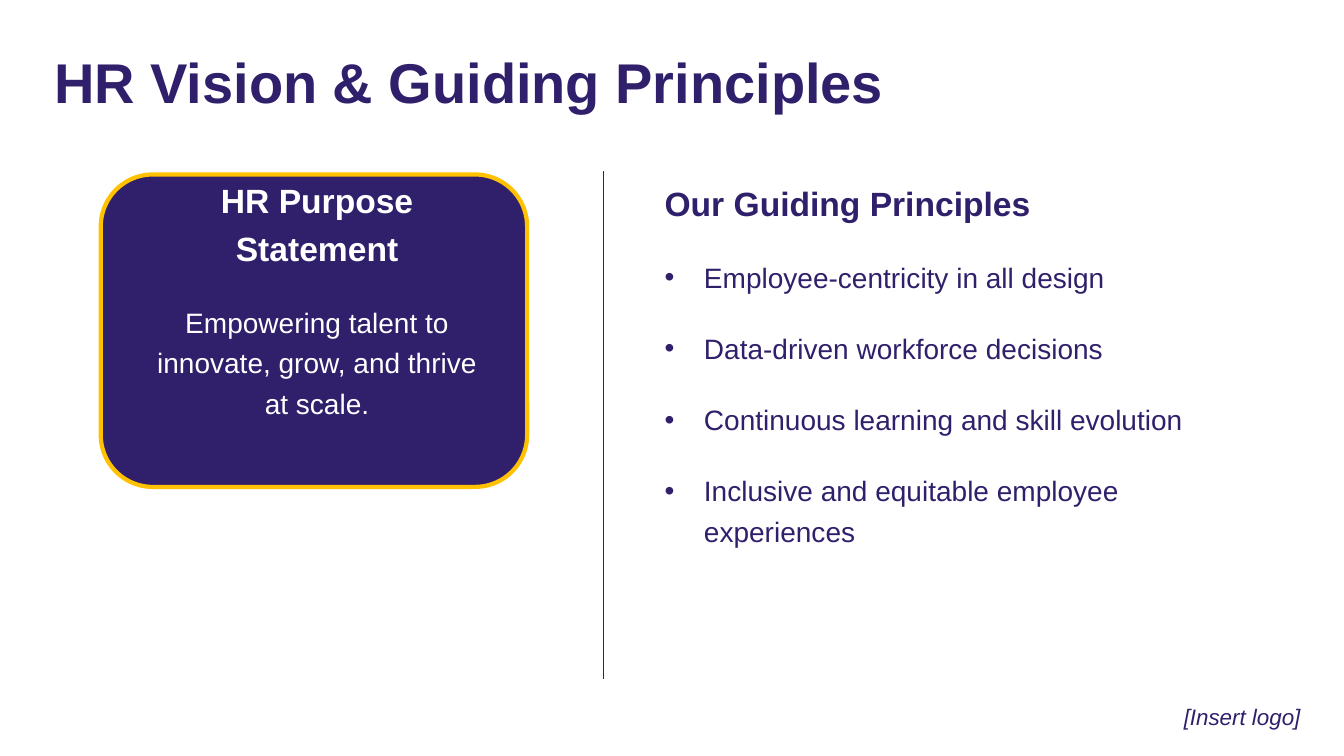
from lxml import etree
from pptx import Presentation, util as u
from pptx.dml.color import RGBColor
from pptx.enum import shapes, text
from pptx.oxml import ns

COLORS = {"navy": "30206B", "rule": "31216B", "gold": "FFC100", "white": "FFFFFF"}
COLUMNS, ROWS = 40, 24
PRINCIPLES = [
    "Employee-centricity in all design",
    "Data-driven workforce decisions",
    "Continuous learning and skill evolution",
    "Inclusive and equitable employee experiences",
]


def color(name):
    return RGBColor.from_string(COLORS[name])


def write(frame, content, size=20, ink="navy", bold=False, italic=False,
          align=text.PP_ALIGN.LEFT, spacing=1.2, before=0, left=0, hanging=0, bullet=None):
    """Fill the first empty paragraph of a frame, or add one after it."""
    first = frame.paragraphs[0]
    paragraph = frame.add_paragraph() if first.runs else first
    paragraph.alignment = align
    paragraph.line_spacing = spacing
    paragraph.space_before = u.Pt(before)
    properties = paragraph._p.get_or_add_pPr()
    properties.set("marL", str(u.Inches(left)))
    properties.set("indent", str(-u.Inches(hanging)))
    if bullet:
        etree.SubElement(properties, ns.qn("a:buFont"), typeface="Arial")
        etree.SubElement(properties, ns.qn("a:buChar"), char=bullet)
    run = paragraph.add_run()
    run.text = content
    run.font.name = "Arial"
    run.font.size = u.Pt(size)
    run.font.bold = bold
    run.font.italic = italic
    run.font.color.rgb = color(ink)


class SlideBuilder:
    """Places elements on a slide by grid columns and rows."""

    def __init__(self, presentation):
        self.slide = presentation.slides.add_slide(presentation.slide_layouts[6])
        self.column = presentation.slide_width / COLUMNS
        self.row = presentation.slide_height / ROWS

    def place(self, x, y, width, height):
        return (round(x * self.column), round(y * self.row),
                round(width * self.column), round(height * self.row))

    def text_box(self, *grid, anchor=text.MSO_ANCHOR.TOP):
        frame = self.slide.shapes.add_textbox(*self.place(*grid)).text_frame
        frame.word_wrap = True
        frame.vertical_anchor = anchor
        frame.margin_left = frame.margin_right = frame.margin_top = frame.margin_bottom = 0
        return frame

    def card(self, *grid):
        shape = self.slide.shapes.add_shape(
            shapes.MSO_SHAPE.ROUNDED_RECTANGLE, *self.place(*grid))
        shape.shadow.inherit = False
        shape.fill.solid()
        shape.fill.fore_color.rgb = color("navy")
        shape.line.color.rgb = color("gold")
        shape.line.width = u.Pt(3)

    def divider(self, x, top, bottom):
        left, start, _, end = self.place(x, top, 0, bottom)
        line = self.slide.shapes.add_connector(
            shapes.MSO_CONNECTOR.STRAIGHT, left, start, left, end)
        line.line.color.rgb = color("rule")
        line.line.width = u.Pt(0.75)
        etree.SubElement(line._element.spPr, ns.qn("a:effectLst"))


def main():
    presentation = Presentation()
    presentation.slide_width = u.Inches(13.33)
    presentation.slide_height = u.Inches(7.5)
    builder = SlideBuilder(presentation)
    center = text.PP_ALIGN.CENTER

    # Title and divider
    title = builder.text_box(1.62, 1.66, 36.81, 2.11, anchor=text.MSO_ANCHOR.MIDDLE)
    write(title, "HR Vision & Guiding Principles", size=40, bold=True, spacing=0.9)
    builder.divider(17.97, 5.44, 21.57)

    # Logo placeholder text
    logo = builder.text_box(34.9, 21.5, 4.14, 1.7, anchor=text.MSO_ANCHOR.BOTTOM)
    write(logo, "[Insert logo]", size=16, italic=True, align=center, spacing=0.9)

    # Guiding principles
    principles = builder.text_box(19.45, 5.54, 18.18, 13.86)
    write(principles, "Our Guiding Principles", size=24, bold=True, left=0.11)
    for principle in PRINCIPLES:
        write(principles, principle, before=22, left=0.5, hanging=0.39, bullet="•")

    # Purpose card
    builder.card(3, 5.54, 12.69, 9.92)
    purpose = builder.text_box(4.47, 5.44, 9.93, 8.77)
    write(purpose, "HR Purpose Statement", size=24, ink="white", bold=True, align=center)
    write(purpose, "Empowering talent to innovate, grow, and thrive at scale.",
          ink="white", align=center, before=22)

    presentation.save("out.pptx")


if __name__ == "__main__":
    main()
